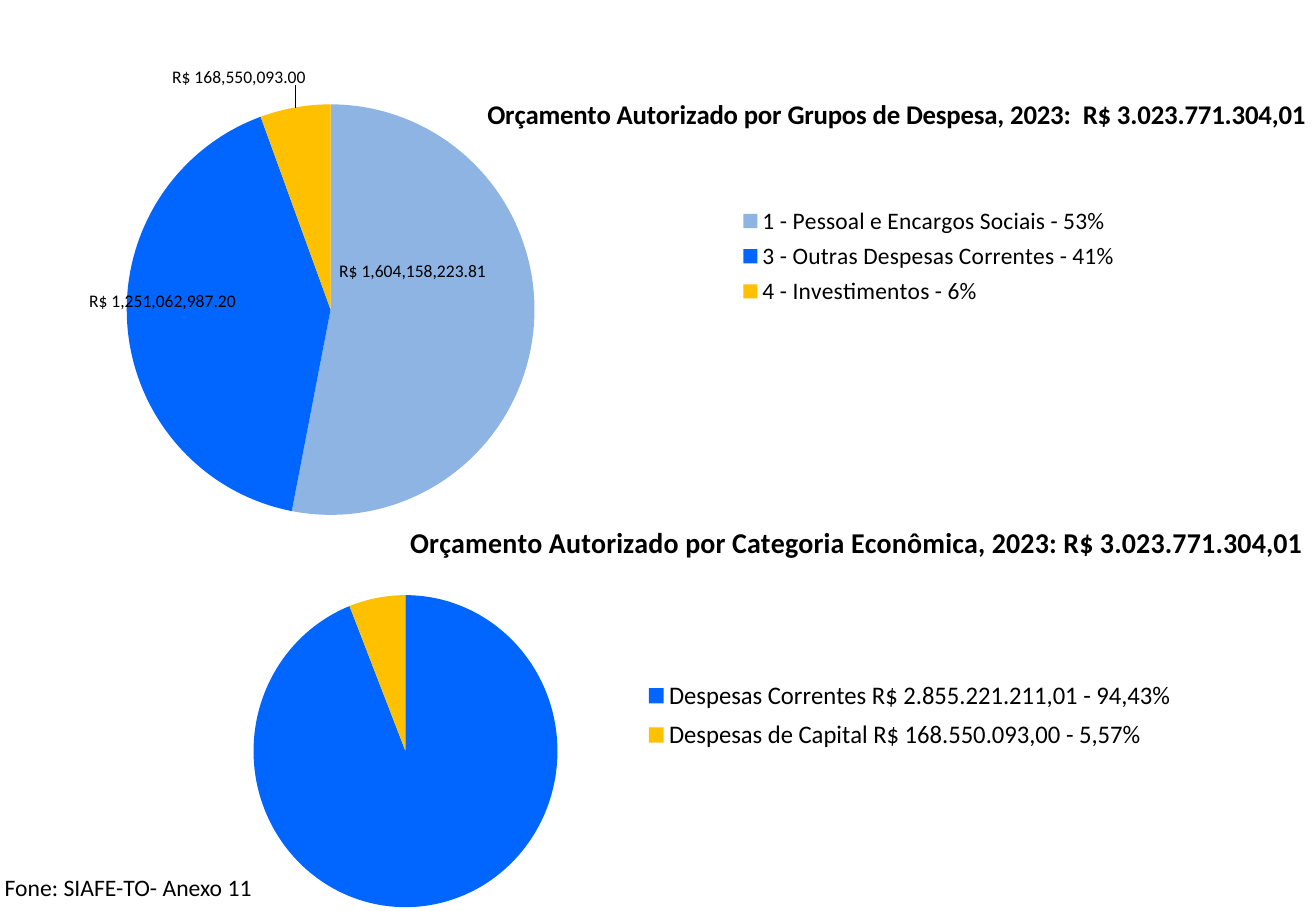
from dataclasses import dataclass

from pptx import Presentation
from pptx.chart.data import CategoryChartData
from pptx.dml.color import RGBColor
from pptx.enum.chart import XL_CHART_TYPE as ChartType
from pptx.enum.chart import XL_LABEL_POSITION as LabelPosition
from pptx.enum.chart import XL_LEGEND_POSITION as LegendPosition
from pptx.oxml import parse_xml
from pptx.oxml.ns import nsdecls, qn
from pptx.util import Inches, Pt


@dataclass(frozen=True)
class Theme:
    font: str = "Calibri"
    text: str = "000000"
    light_blue: str = "8EB4E3"
    blue: str = "0066FF"
    yellow: str = "FFC000"
    source_size: float = 14
    label_size: float = 10.5


THEME = Theme()
MONEY_FORMAT = '"R$"\\ #,##0.00'

# Boxes are left, top, width, height in inches; inner boxes are relative to the chart.
GROUPS = {
    "title": "Orçamento Autorizado por Grupos de Despesa, 2023:  R$ 3.023.771.304,01",
    "title_size": 16,
    "legend_size": 14,
    "slices": [
        ("1 - Pessoal e Encargos Sociais - 53%", 1604158223.81, THEME.light_blue),
        ("3 - Outras Despesas Correntes - 41%", 1251062987.20, THEME.blue),
        ("4 - Investimentos - 6%", 168550093, THEME.yellow),
    ],
    "title_at": (4.0, 0.2),
    "pie_box": (1.05, 0.31, 3.38, 3.38),
    "legend_box": (6.0, 1.1, 3.4, 0.92),
    "labels": [
        (LabelPosition.CENTER, (-0.16, -0.39)),
        (LabelPosition.CENTER, (-0.55, -0.13)),
        (LabelPosition.OUTSIDE_END, (0.1, -0.12)),
    ],
}
CATEGORIES = {
    "title": "Orçamento Autorizado por Categoria Econômica, 2023: R$ 3.023.771.304,01",
    "title_size": 17,
    "legend_size": 15,
    "slices": [
        ("Despesas Correntes R$ 2.855.221.211,01 - 94,43%", 94, THEME.blue),
        ("Despesas de Capital R$ 168.550.093,00 - 5,57%", 6, THEME.yellow),
    ],
    "title_at": (3.3, 0.18),
    "pie_box": (2.02, 0.82, 2.57, 2.57),
    "legend_box": (5.22, 1.45, 4.7, 0.72),
    "labels": [],
}


def style_font(font, size, bold=False):
    values = {"name": THEME.font, "size": Pt(size), "bold": bold}
    for name, value in values.items():
        setattr(font, name, value)
    font.color.rgb = RGBColor.from_string(THEME.text)


def set_layout(parent, lengths, chart_size, after=None, edge=False, inner=False):
    """Place a chart part, turning inches into fractions of the chart size."""
    for old in parent.findall(qn("c:layout")):
        parent.remove(old)
    tags = ['<c:layoutTarget val="inner"/>'] if inner else []
    if edge:
        tags += ['<c:xMode val="edge"/>', '<c:yMode val="edge"/>']
    for index, (tag, length) in enumerate(zip("xywh", lengths)):
        tags.append(f'<c:{tag} val="{length / chart_size[index % 2]:.4f}"/>')
    layout = parse_xml(
        f"<c:layout {nsdecls('c')}><c:manualLayout>{''.join(tags)}"
        "</c:manualLayout></c:layout>"
    )
    if after:
        parent.find(qn(after)).addnext(layout)
    else:
        parent.insert(0, layout)


def add_value_labels(plot, labels, chart_size):
    series = plot.series[0]
    for index, (position, offset) in enumerate(labels):
        label = series.points[index].data_label
        style_font(label.font, THEME.label_size)
        label.position = position
    group = series.data_labels
    group.show_value = True
    group.number_format = MONEY_FORMAT
    group.number_format_is_linked = False
    style_font(group.font, THEME.label_size)
    group_xml = series.data_labels._element
    for element, (position, offset) in zip(group_xml.findall(qn("c:dLbl")), labels):
        set_layout(element, offset, chart_size, after="c:idx")
        number_format = parse_xml(f'<c:numFmt {nsdecls("c")} sourceLinked="0"/>')
        number_format.set("formatCode", MONEY_FORMAT)
        element.find(qn("c:layout")).addnext(number_format)


def add_pie(slide, box, content):
    names, values, colors = zip(*content["slices"])
    data = CategoryChartData()
    data.categories = names
    data.add_series("Series 1", values)
    chart = slide.shapes.add_chart(
        ChartType.PIE, *(Inches(length) for length in box), data
    ).chart
    chart_size = box[2:]
    style_font(chart.font, THEME.label_size)

    chart.has_title = True
    frame = chart.chart_title.text_frame
    frame.text = content["title"]
    style_font(frame.paragraphs[0].runs[0].font, content["title_size"], bold=True)
    chart.chart_title.include_in_layout = False
    set_layout(chart.chart_title._element, content["title_at"], chart_size,
               after="c:tx", edge=True)

    plot = chart.plots[0]
    plot.vary_by_categories = True
    for index, color in enumerate(colors):
        point_format = plot.series[0].points[index].format
        point_format.fill.solid()
        point_format.fill.fore_color.rgb = RGBColor.from_string(color)
        point_format.line.fill.background()
    plot_area = chart._chartSpace.chart.plotArea
    set_layout(plot_area, content["pie_box"], chart_size, edge=True, inner=True)

    chart.has_legend = True
    chart.legend.position = LegendPosition.RIGHT
    chart.legend.include_in_layout = False
    style_font(chart.legend.font, content["legend_size"])
    set_layout(chart.legend._element, content["legend_box"], chart_size,
               after="c:legendPos", edge=True)

    if content["labels"]:
        add_value_labels(plot, content["labels"], chart_size)


def add_source(slide, box):
    shape = slide.shapes.add_textbox(*(Inches(length) for length in box))
    frame = shape.text_frame
    frame.word_wrap = False
    frame.text = "Fone: SIAFE-TO- Anexo 11"
    style_font(frame.paragraphs[0].runs[0].font, THEME.source_size)


def main():
    presentation = Presentation()
    presentation.slide_width = Inches(10.83)
    presentation.slide_height = Inches(7.5)
    slide = presentation.slides.add_slide(presentation.slide_layouts[6])
    add_source(slide, (-0.06, 7.14, 2.25, 0.34))
    add_pie(slide, (0, 0.55, 10.83, 3.69), GROUPS)
    add_pie(slide, (0.12, 4.08, 10.65, 3.69), CATEGORIES)
    presentation.save("out.pptx")


if __name__ == "__main__":
    main()
